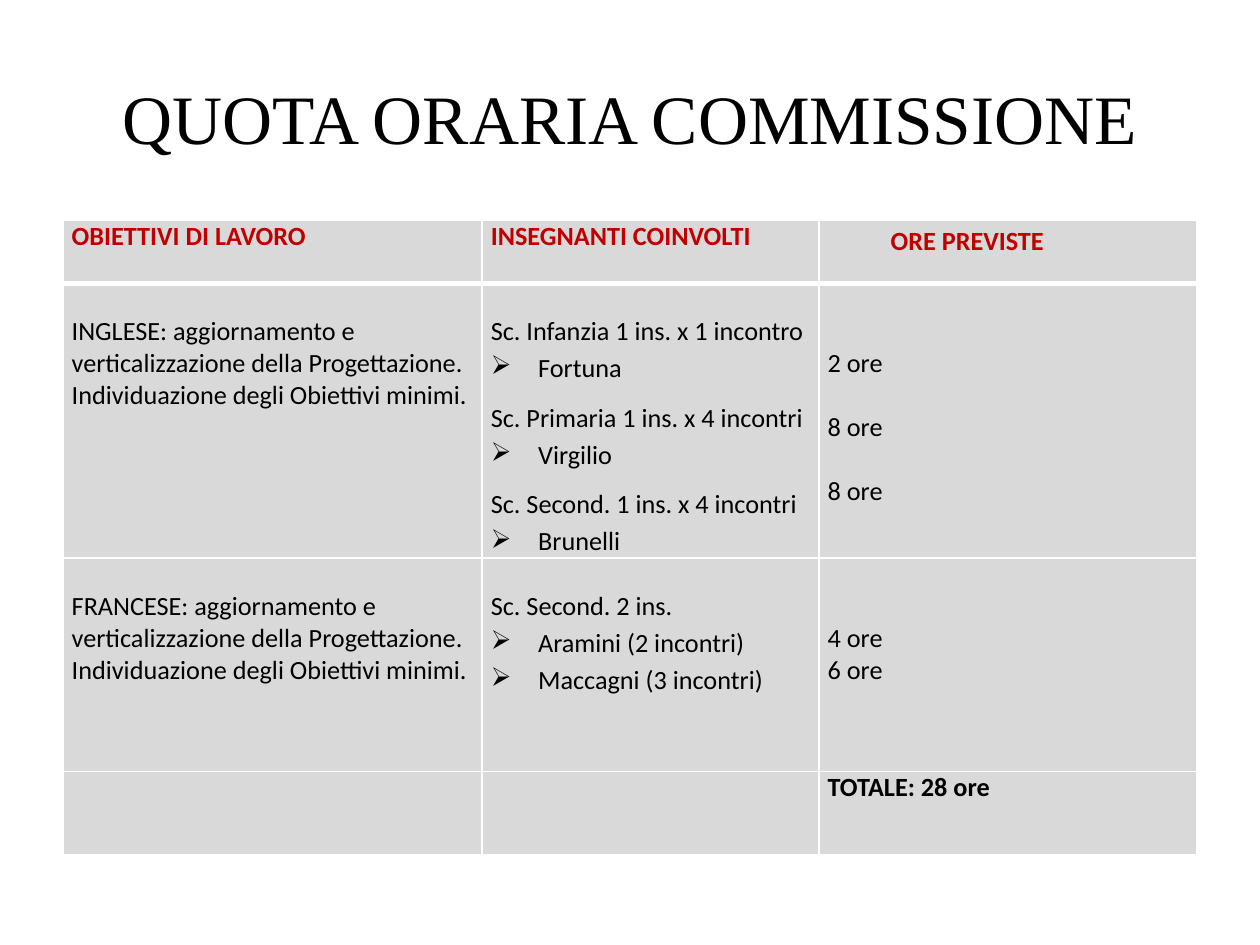
"""Build the slide with the table of committee hours."""
import pptx
import pptx.enum.text
import pptx.oxml
import pptx.oxml.ns
import pptx.util

Pt = pptx.util.Pt
COLORS = {"text": "000000", "head": "C00000", "cell": "D9D9D9", "border": "FFFFFF"}
LINE = 18.3
BODY = {"name": "Calibri", "size": Pt(15), "bold": False}
BOLD = {**BODY, "bold": True}
TITLE = {"name": "Times New Roman", "size": Pt(39.6), "bold": False}
PLAIN = {}
GAP = {"space_before": Pt(LINE)}
TIGHT = {"line_spacing": 1.15}
LOOSE = {"line_spacing": 1.15, "space_after": Pt(10)}


def add_text(p, text, font, color):
    r = p.add_run()
    r.text = text
    for key, value in font.items():
        setattr(r.font, key, value)
    r.font.color.rgb = pptx.dml.color.RGBColor.from_string(COLORS[color])


def set_indent(p, left, first, bullet=None):
    pPr = p._p.get_or_add_pPr()
    pPr.set("marL", str(Pt(left)))
    pPr.set("indent", str(Pt(first)))
    if bullet:
        bu = pptx.oxml.parse_xml(f'<a:buChar {pptx.oxml.ns.nsdecls("a")} char="{bullet}"/>')
        pPr.append(bu)


goal = ["aggiornamento e verticalizzazione della Progettazione.",
        "Individuazione degli Obiettivi minimi."]
rows = [
    [(0, [("OBIETTIVI DI LAVORO", PLAIN)]),
     (0, [("INSEGNANTI COINVOLTI", PLAIN)]),
     (0, [("ORE PREVISTE", LOOSE)])],
    [(1, [(f"INGLESE: {goal[0]}", PLAIN), (goal[1], PLAIN)]),
     (1, [("Sc. Infanzia 1 ins. x 1 incontro", PLAIN), ("➢Fortuna", LOOSE),
          ("Sc. Primaria 1 ins. x 4 incontri", PLAIN), ("➢Virgilio", LOOSE),
          ("Sc. Second. 1 ins. x 4 incontri", PLAIN), ("➢Brunelli", LOOSE)]),
     (2, [("2 ore", PLAIN), ("8 ore", GAP), ("8 ore", GAP)])],
    [(1, [(f"FRANCESE: {goal[0]}", PLAIN), (goal[1], PLAIN)]),
     (1, [("Sc. Second. 2 ins.", PLAIN), ("➢Aramini (2 incontri)", TIGHT),
          ("➢Maccagni (3 incontri)", LOOSE)]),
     (2, [("4 ore", PLAIN), ("6 ore", PLAIN)])],
    [(0, []), (0, []), (0, [("TOTALE: 28 ore", PLAIN)])],
]

prs = pptx.Presentation()
prs.slide_width, prs.slide_height = Pt(720), Pt(540)
s = prs.slides.add_slide(prs.slide_layouts[5])

sp = s.shapes.title
for key, value in {"left": 36, "top": 21.6, "width": 648, "height": 90}.items():
    setattr(sp, key, Pt(value))
tf = sp.text_frame
tf.vertical_anchor = pptx.enum.text.MSO_ANCHOR.MIDDLE
p = tf.paragraphs[0]
p.alignment = pptx.enum.text.PP_ALIGN.CENTER
add_text(p, "QUOTA ORARIA COMMISSIONE", TITLE, "text")

widths, heights = [239.5, 192.5, 216], [36, 157, 122, 47.5]
table = s.shapes.add_table(len(heights), len(widths), Pt(36), Pt(126),
                           Pt(sum(widths)), Pt(sum(heights))).table
for col, width in zip(table.columns, widths):
    col.width = Pt(width)
for row, height in zip(table.rows, heights):
    row.height = Pt(height)

for i, row in enumerate(rows):
    for j, (blank, lines) in enumerate(row):
        cell = table.cell(i, j)
        margins = {"left": 5, "right": 5, "top": blank * LINE, "bottom": 0}
        for side, value in margins.items():
            setattr(cell, f"margin_{side}", Pt(value))
        tcPr = cell._tc.get_or_add_tcPr()
        for side in "LRTB":
            weight = 3 if (i, side) in [(0, "B"), (1, "T")] else 1
            tcPr.append(pptx.oxml.parse_xml(
                f'<a:ln{side} {pptx.oxml.ns.nsdecls("a")} w="{Pt(weight)}"><a:solidFill>'
                f'<a:srgbClr val="{COLORS["border"]}"/></a:solidFill></a:ln{side}>'))
        cell.fill.solid()
        cell.fill.fore_color.rgb = pptx.dml.color.RGBColor.from_string(COLORS["cell"])
        tf = cell.text_frame
        for k, (text, spacing) in enumerate(lines):
            p = tf.add_paragraph() if k else tf.paragraphs[0]
            for key, value in spacing.items():
                setattr(p, key, value)
            if text.startswith("➢"):
                set_indent(p, 27, -27, "➢")
            elif i == 0 and j == 2:
                set_indent(p, 36, 0)
            add_text(p, text.lstrip("➢"), BOLD if i in (0, 3) else BODY,
                     "text" if i else "head")

prs.save("out.pptx")
